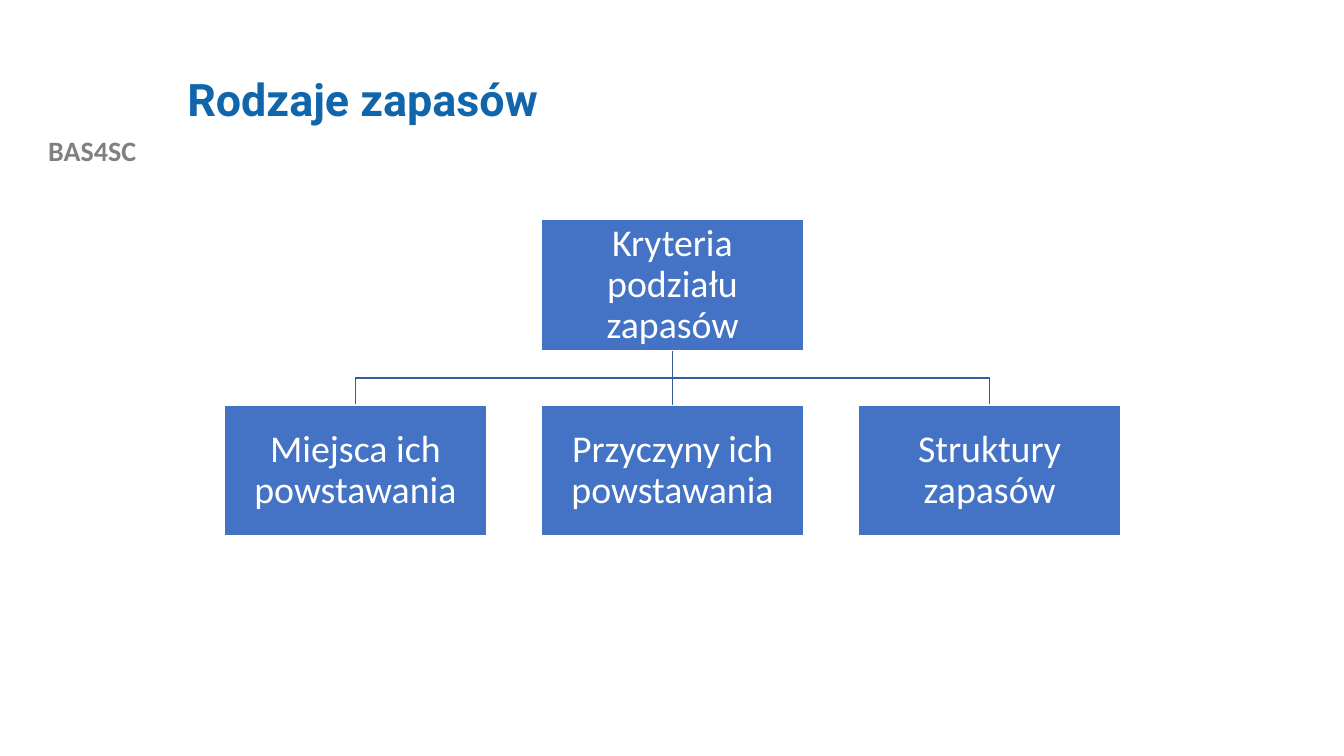
from lxml import etree
from pptx import Presentation
from pptx.dml.color import RGBColor
from pptx.enum.shapes import MSO_CONNECTOR, MSO_SHAPE
from pptx.enum.text import MSO_ANCHOR, PP_ALIGN
from pptx.oxml.ns import qn
from pptx.util import Inches, Pt

COLORS = {"title": "1065AB", "label": "808080", "box": "4472C4",
          "branch": "365B9D", "white": "FFFFFF"}
BOX_WIDTH, BOX_HEIGHT = 2.6, 1.3
ROOT_LEFT, ROOT_TOP = 5.37, 2.18
CHILD_TOP, CHILD_STEP = 4.02, 3.145
CRITERIA = ["Miejsca ich powstawania", "Przyczyny ich powstawania", "Struktury zapasów"]


def write_text(shape, text, color, frame_format, para_format, font_format):
    frame = shape.text_frame
    for name, value in frame_format.items():
        setattr(frame, name, value)
    para = frame.paragraphs[0]
    for name, value in para_format.items():
        setattr(para, name, value)
    span = para.add_run()
    span.text = text
    for name, value in font_format.items():
        setattr(span.font, name, value)
    span.font.color.rgb = RGBColor.from_string(COLORS[color])


def style_line(shape, color):
    shape.line.color.rgb = RGBColor.from_string(COLORS[color])
    shape.line.width = Pt(1)


deck = Presentation()
deck.slide_width, deck.slide_height = Inches(13.33), Inches(7.5)
page = deck.slides.add_slide(deck.slide_layouts[6])

label = page.shapes.add_textbox(Inches(0), Inches(1.28), Inches(1.83), Inches(0.44))
write_text(label, "BAS4SC", "label", {"word_wrap": True},
           {"alignment": PP_ALIGN.CENTER},
           {"size": Pt(20), "name": "Calibri", "bold": True})

title = page.shapes.add_textbox(Inches(1.76), Inches(0.4), Inches(10.66), Inches(1.22))
write_text(title, "Rodzaje zapasów", "title",
           {"word_wrap": True, "vertical_anchor": MSO_ANCHOR.MIDDLE},
           {"line_spacing": 0.9},
           {"size": Pt(32), "name": "Roboto", "bold": True})

root_center = ROOT_LEFT + BOX_WIDTH / 2
root_bottom = ROOT_TOP + BOX_HEIGHT
branch_middle = (root_bottom + CHILD_TOP) / 2
for side in (1, -1):
    child_center = root_center + side * CHILD_STEP
    outline = page.shapes.build_freeform(Inches(root_center), Inches(root_bottom))
    outline.add_line_segments(
        [(Inches(x), Inches(y)) for x, y in [(root_center, branch_middle),
                                             (child_center, branch_middle),
                                             (child_center, CHILD_TOP)]],
        close=False)
    branch = outline.convert_to_shape()
    branch.shadow.inherit = False
    branch.fill.background()
    style_line(branch, "branch")

nodes = [("Kryteria podziału zapasów", ROOT_LEFT, ROOT_TOP)]
for index, criterion in enumerate(CRITERIA):
    nodes.append((criterion, ROOT_LEFT + (index - 1) * CHILD_STEP, CHILD_TOP))

boxes = []
for text, left, top in nodes:
    box = page.shapes.add_shape(MSO_SHAPE.RECTANGLE, Inches(left), Inches(top),
                                Inches(BOX_WIDTH), Inches(BOX_HEIGHT))
    box.shadow.inherit = False
    box.fill.solid()
    box.fill.fore_color.rgb = RGBColor.from_string(COLORS["box"])
    style_line(box, "white")
    margins = {f"margin_{side}": Inches(0.02) for side in ("left", "top", "right", "bottom")}
    write_text(box, text, "white",
               {"word_wrap": True, "vertical_anchor": MSO_ANCHOR.MIDDLE, **margins},
               {"alignment": PP_ALIGN.CENTER, "line_spacing": 0.9},
               {"size": Pt(27), "name": "Calibri"})
    boxes.append(box)

stem = page.shapes.add_connector(MSO_CONNECTOR.STRAIGHT, Inches(root_center), Inches(root_bottom),
                                 Inches(root_center), Inches(CHILD_TOP))
stem.begin_connect(boxes[0], 2)
stem.end_connect(boxes[2], 0)
style_line(stem, "branch")
etree.SubElement(stem.element.spPr, qn("a:effectLst"))

deck.save("out.pptx")
